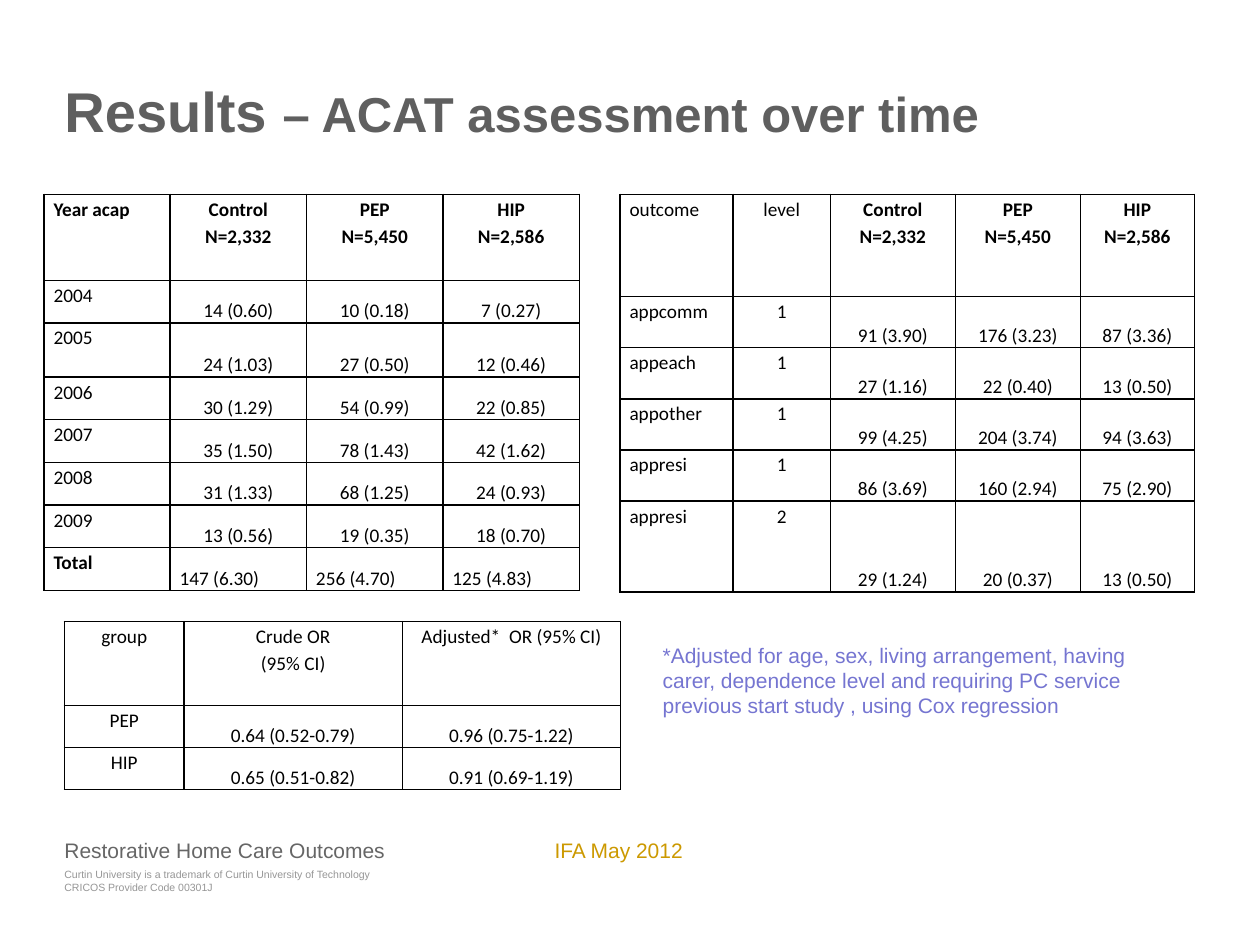
from lxml import etree
from pptx import Presentation
from pptx import util as u
from pptx.dml.color import RGBColor
from pptx.enum import text
from pptx.oxml import ns

BLACK = RGBColor(0x00, 0x00, 0x00)
GREY = RGBColor(0x5F, 0x5F, 0x5F)
MID = RGBColor(0x66, 0x66, 0x66)
PALE = RGBColor(0x96, 0x96, 0x96)
GOLD = RGBColor(0xCC, 0x99, 0x00)
VIOLET = RGBColor(0x75, 0x75, 0xD1)

LEFT, MIDDLE, JUST = (text.PP_ALIGN.LEFT, text.PP_ALIGN.CENTER,
                      text.PP_ALIGN.JUSTIFY)
ARMS = ["Control\nN=2,332", "PEP\nN=5,450", "HIP\nN=2,586"]

# Text boxes: place (left, top, width, height in cm), wrap, paragraphs of runs
TEXTS = [
    ((1.3, 17.5, 7.8, 0.61), False, [
        [("Curtin University is a trademark of Curtin University of Technology",
          6, PALE, False)],
        [("CRICOS Provider Code 00301J", 6, PALE, False)]]),
    ((1.3, 1.55, 22.81, 2.77), True, [
        [("Results ", 32, GREY, True),
         ("– ACAT assessment over time", 28, GREY, True)]]),
    ((11.18, 16.89, 5.92, 0.61), False, [
        [("IFA May 2012", 12, GOLD, False)]]),
    ((1.3, 16.89, 9.6, 0.61), False, [
        [("Restorative Home Care Outcomes", 12, MID, False)]]),
]
NOTE = ((13.11, 12.83, 10.39, 1.8), True, [
    [("*Adjusted for age, sex, living arrangement, having carer, dependence "
      "level and requiring PC service previous start study , using Cox "
      "regression", 12, VIOLET, False)]])

# Tables: sizes in cm; "lead" aligns the label columns, "bold" lists (row, col)
TABLES = [
    {"at": (0.89, 3.92), "lead": [JUST],
     "cols": [2.54] + [2.75] * 3,
     "rows": [1.73, 0.86, 1.09] + [0.86] * 5,
     "bold": [(0, 0), (0, 1), (0, 2), (0, 3), (7, 0)],
     "data": [
         ["Year acap"] + ARMS,
         ["2004", "14 (0.60)", "10 (0.18)", "7 (0.27)"],
         ["2005", "24 (1.03)", "27 (0.50)", "12 (0.46)"],
         ["2006", "30 (1.29)", "54 (0.99)", "22 (0.85)"],
         ["2007", "35 (1.50)", "78 (1.43)", "42 (1.62)"],
         ["2008", "31 (1.33)", "68 (1.25)", "24 (0.93)"],
         ["2009", "13 (0.56)", "19 (0.35)", "18 (0.70)"],
         ["Total", "147 (6.30)", "256 (4.70)", "125 (4.83)"]]},
    {"at": (12.5, 3.92), "lead": [LEFT, MIDDLE],
     "cols": [2.28, 1.96, 2.52, 2.52, 2.3],
     "rows": [2.06] + [1.03] * 4 + [1.83],
     "bold": [(0, 2), (0, 3), (0, 4)],
     "data": [
         ["outcome", "level"] + ARMS,
         ["appcomm", "1", "91 (3.90)", "176 (3.23)", "87 (3.36)"],
         ["appeach", "1", "27 (1.16)", "22 (0.40)", "13 (0.50)"],
         ["appother", "1", "99 (4.25)", "204 (3.74)", "94 (3.63)"],
         ["appresi", "1", "86 (3.69)", "160 (2.94)", "75 (2.90)"],
         ["appresi", "2", "29 (1.24)", "20 (0.37)", "13 (0.50)"]]},
    {"at": (1.3, 12.53), "lead": [MIDDLE],
     "cols": [2.41, 4.4, 4.4],
     "rows": [1.69, 0.85, 0.85],
     "bold": [],
     "data": [
         ["group", "Crude OR\n(95% CI)", "Adjusted*  OR (95% CI)"],
         ["PEP", "0.64 (0.52-0.79)", "0.96 (0.75-1.22)"],
         ["HIP", "0.65 (0.51-0.82)", "0.91 (0.69-1.19)"]]},
]


def add_run(para, words, size, color, bold, face="Arial"):
    run = para.add_run()
    run.text = words
    font = run.font
    font.name, font.size, font.bold = face, u.Pt(size), bold
    font.color.rgb = color


def pad(part, side, top, base):
    part.margin_left = part.margin_right = u.Cm(side)
    part.margin_top, part.margin_bottom = u.Cm(top), u.Cm(base)


def add_text(slide, place, wrap, paras):
    box = slide.shapes.add_textbox(*map(u.Cm, place))
    frame = box.text_frame
    frame.word_wrap = wrap
    for i, runs in enumerate(paras):
        para = frame.add_paragraph() if i else frame.paragraphs[0]
        for run in runs:
            add_run(para, *run)
    return frame


def add_edges(cell):
    props = cell._tc.get_or_add_tcPr()
    for i, side in enumerate(("lnL", "lnR", "lnT", "lnB")):
        line = etree.Element(ns.qn("a:" + side), w=str(u.Pt(1)))
        fill = etree.SubElement(line, ns.qn("a:solidFill"))
        etree.SubElement(fill, ns.qn("a:srgbClr"), val=str(BLACK))
        props.insert(i, line)


def fill_cell(cell, words, align, bold, value, total):
    # Plain values sit low and tight; labels and totals are set looser
    loose = not value or total
    pad(cell, *((0.19, 0, 0) if loose else (0.02, 0.02, 0)))
    cell.vertical_anchor = (text.MSO_ANCHOR.BOTTOM if value
                            else text.MSO_ANCHOR.TOP)
    cell.fill.background()
    add_edges(cell)
    frame = cell.text_frame
    for i, line in enumerate(words.split("\n")):
        para = frame.add_paragraph() if i else frame.paragraphs[0]
        para.alignment = align
        if loose:
            para.line_spacing = 1.15
        if value and total:
            para.space_after = u.Pt(10)
        add_run(para, line, 11, BLACK, bold, "Calibri")


def add_grid(slide, item):
    cols, rows, lead = item["cols"], item["rows"], item["lead"]
    size = (sum(cols), sum(rows))
    grid = slide.shapes.add_table(len(rows), len(cols),
                                  *map(u.Cm, item["at"] + size)).table
    grid.first_row = grid.horz_banding = False
    for col, width in zip(grid.columns, cols):
        col.width = u.Cm(width)
    for row, height in zip(grid.rows, rows):
        row.height = u.Cm(height)
    for r, line in enumerate(item["data"]):
        total = line[0] == "Total"
        for c, words in enumerate(line):
            value = r > 0 and c >= len(lead)
            if c < len(lead):
                align = lead[c]
            else:
                align = LEFT if total else MIDDLE
            fill_cell(grid.cell(r, c), words, align,
                      (r, c) in item["bold"], value, total)


def main():
    deck = Presentation()
    deck.slide_width, deck.slide_height = u.Cm(25.4), u.Cm(19.05)
    slide = deck.slides.add_slide(deck.slide_layouts[6])

    # Title and footer
    for item in TEXTS:
        pad(add_text(slide, *item), 0, 0, 0)

    # Result tables
    for item in TABLES:
        add_grid(slide, item)

    # Footnote
    note = add_text(slide, *NOTE)
    note.auto_size = text.MSO_AUTO_SIZE.SHAPE_TO_FIT_TEXT

    deck.save("out.pptx")


if __name__ == "__main__":
    main()
